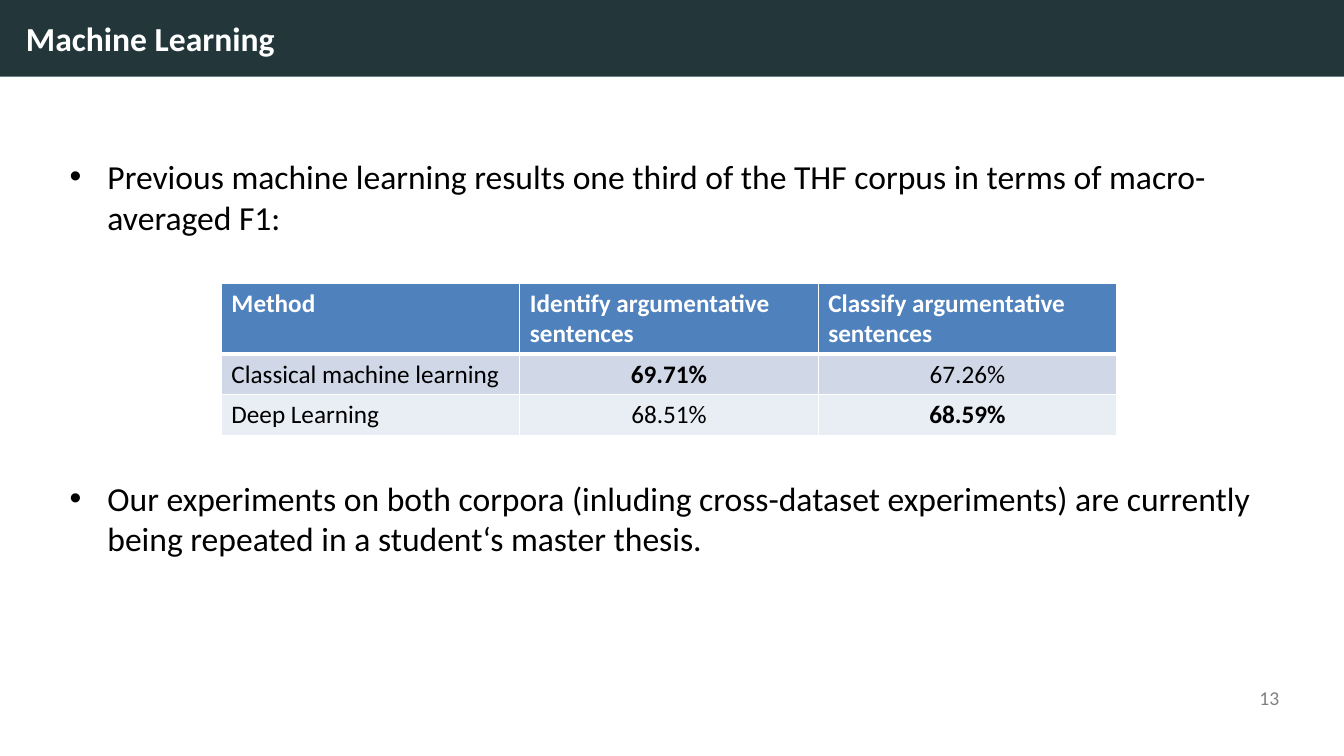
from dataclasses import dataclass

from lxml.etree import SubElement
from pptx import Presentation
from pptx.dml.color import RGBColor
from pptx.enum.shapes import MSO_SHAPE as Shape
from pptx.enum.text import MSO_ANCHOR as Anchor, MSO_AUTO_SIZE as AutoSize, PP_ALIGN as Align
from pptx.oxml.ns import qn
from pptx.util import Cm, Pt

FONT = "Calibri"
WHITE, BLACK, GREY = "FFFFFF", "000000", "808080"
BAND = "23373B"
HEADER_FILL = "4F81BD"
BODY_FILLS = ("D0D8E8", "E9EDF4")


@dataclass
class Result:
    method: str
    identify: float
    classify: float


RESULTS = [
    Result("Classical machine learning", 69.71, 67.26),
    Result("Deep Learning", 68.51, 68.59),
]
HEADINGS = ["Method", "Identify argumentative sentences", "Classify argumentative sentences"]
BULLETS = [
    "Previous machine learning results one third of the THF corpus in terms of "
    "macro-averaged F1:",
    "Our experiments on both corpora (inluding cross-dataset experiments) are currently "
    "being repeated in a student‘s master thesis.",
]


def rgb(value: str) -> RGBColor:
    return RGBColor.from_string(value)


def write(p, text: str, *, size: float = 24, color: str = BLACK, bold: bool = False,
          align: Align = Align.LEFT, before: float = 0) -> None:
    p.alignment = align
    p.space_before = Pt(before)
    r = p.add_run()
    r.text = text
    r.font.name = FONT
    r.font.size = Pt(size)
    r.font.bold = bold
    r.font.color.rgb = rgb(color)


def place(sp, left: float, top: float, width: float, height: float) -> None:
    """Position a shape, in centimetres."""
    sp.left, sp.top, sp.width, sp.height = Cm(left), Cm(top), Cm(width), Cm(height)


def set_borders(cell, top: float, bottom: float) -> None:
    """Draw white cell borders; top and bottom widths are in points."""
    tc_pr = cell._tc.get_or_add_tcPr()
    widths = {"lnL": 1, "lnR": 1, "lnT": top, "lnB": bottom}
    for i, (side, width) in enumerate(widths.items()):
        ln = SubElement(tc_pr, qn(f"a:{side}"), w=str(Pt(width)))
        SubElement(SubElement(ln, qn("a:solidFill")), qn("a:srgbClr"), val=WHITE)
        tc_pr.insert(i, ln)


def fill_cell(cell, text: str, fill: str, *, top: float = 1, bottom: float = 1, **fmt) -> None:
    cell.fill.solid()
    cell.fill.fore_color.rgb = rgb(fill)
    set_borders(cell, top, bottom)
    write(cell.text_frame.paragraphs[0], text, size=18, **fmt)


def add_band(s, width: int) -> None:
    """Put the dark title band on the layout, behind the slide's placeholders."""
    band = s.shapes.add_shape(Shape.RECTANGLE, 0, 0, width, Cm(1.93))
    band.shadow.inherit = False
    band.fill.solid()
    band.fill.fore_color.rgb = rgb(BAND)
    band.line.fill.background()
    s.slide_layout.shapes.element.insert(2, band.element)


def add_results(s) -> None:
    table = s.shapes.add_table(len(RESULTS) + 1, len(HEADINGS),
                               Cm(5.58), Cm(7.13), Cm(22.56), Cm(3.85)).table
    for row, height in zip(table.rows, (1.79, 1.03, 1.03)):
        row.height = Cm(height)
    for col, heading in enumerate(HEADINGS):
        fill_cell(table.cell(0, col), heading, HEADER_FILL, bottom=3, color=WHITE, bold=True)
    best = [max(r.identify for r in RESULTS), max(r.classify for r in RESULTS)]
    for row, (result, fill) in enumerate(zip(RESULTS, BODY_FILLS), 1):
        top = 3 if row == 1 else 1
        fill_cell(table.cell(row, 0), result.method, fill, top=top)
        for col, score in enumerate((result.identify, result.classify), 1):
            fill_cell(table.cell(row, col), f"{score:.2f}%", fill, top=top,
                      bold=score == best[col - 1], align=Align.CENTER)


def main() -> None:
    prs = Presentation()
    prs.slide_width, prs.slide_height = Cm(33.87), Cm(19.05)
    s = prs.slides.add_slide(prs.slide_layouts[1])
    add_band(s, prs.slide_width)

    title = s.shapes.title
    place(title, 0.4, 0.25, 33.47, 1.42)
    title.text_frame.vertical_anchor = Anchor.MIDDLE
    title.text_frame.auto_size = AutoSize.NONE
    write(title.text_frame.paragraphs[0], "Machine Learning", color=WHITE, bold=True)

    body = s.placeholders[1]
    place(body, 1.5, 3.81, 30.96, 12.9)
    tf = body.text_frame
    tf.auto_size = AutoSize.NONE
    write(tf.paragraphs[0], BULLETS[0])
    write(tf.add_paragraph(), BULLETS[1], before=172)

    number = s.shapes.add_textbox(Cm(28.22), Cm(17.15), Cm(4.27), Cm(1.07))
    number.text_frame.word_wrap = True
    write(number.text_frame.paragraphs[0], "13", size=14, color=GREY, align=Align.RIGHT)

    add_results(s)
    prs.save("out.pptx")


if __name__ == "__main__":
    main()
